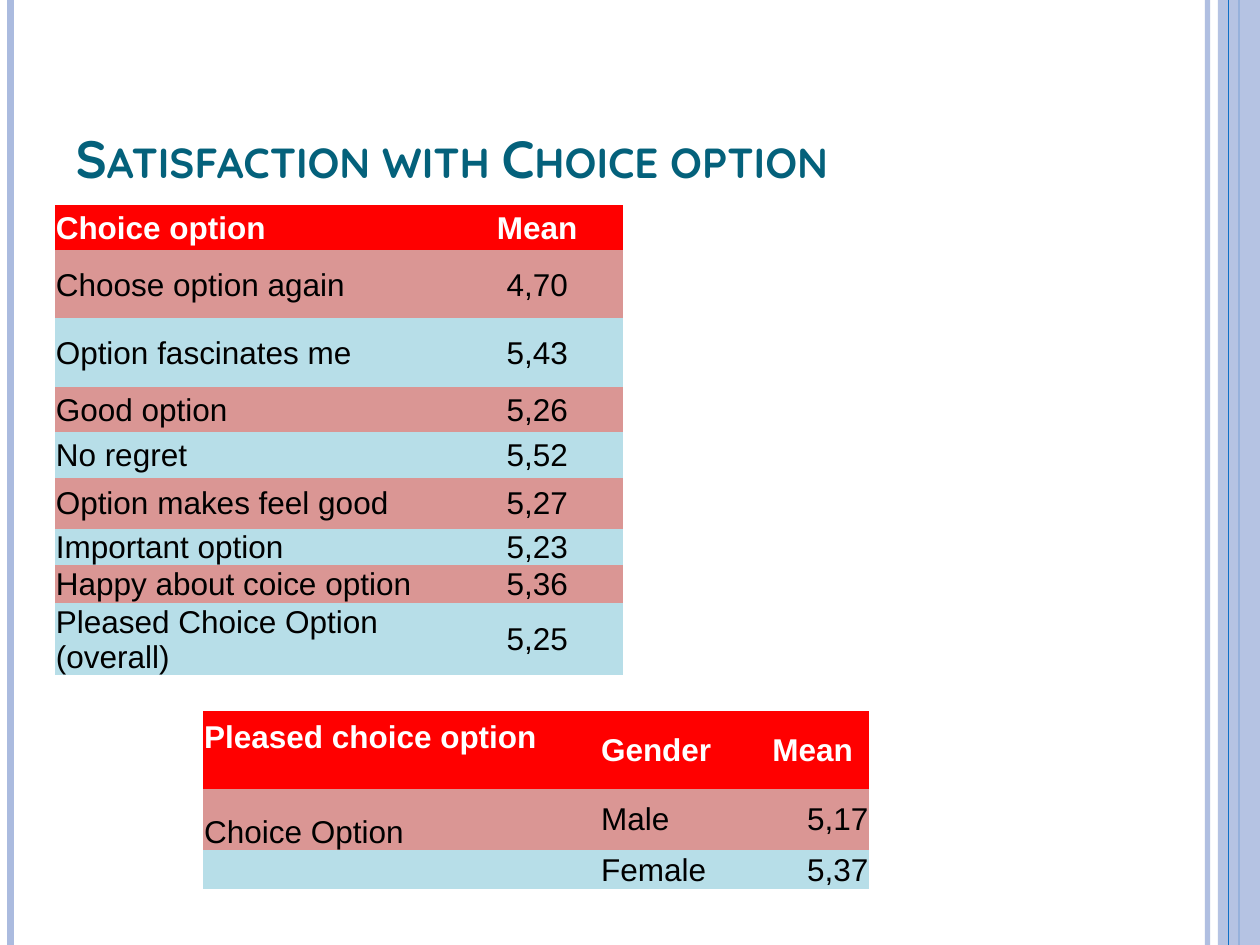
from dataclasses import dataclass

from lxml import etree
from pptx import Presentation
from pptx import util as u
from pptx.dml.color import RGBColor
from pptx.enum import shapes, text
from pptx.oxml import ns

Pt = u.Pt


@dataclass(frozen=True)
class Theme:
    title_font: str = "Quicksand"
    table_font: str = "Arial"
    title_size: float = 30
    table_size: float = 18
    title: str = "04617B"
    pale: str = "ABBBDF"
    blue: str = "0F6FC6"
    header: str = "FF0000"
    header_text: str = "FFFFFF"
    body_text: str = "000000"
    bands: tuple = ("DA9694", "B7DEE8")


THEME = Theme()
WIDTH, HEIGHT = 720, 540
NO_GRID = "{2D5ABB26-0587-4C30-8999-92F81FD0307C}"
LEFT, CENTER, RIGHT = (text.PP_ALIGN.LEFT, text.PP_ALIGN.CENTER,
                       text.PP_ALIGN.RIGHT)
MIDDLE, BOTTOM = text.MSO_ANCHOR.MIDDLE, text.MSO_ANCHOR.BOTTOM


def set_all(target, values):
    for name, value in values.items():
        setattr(target, name, value)


def set_font(font, color, **values):
    set_all(font, values)
    font.color.rgb = RGBColor.from_string(color)


def set_opacity(part, percent):
    color = next(part._element.spPr.iter(ns.qn("a:srgbClr")))
    etree.SubElement(color, ns.qn("a:alpha"), val=str(percent * 1000))


def add_rule(page, x, top, height, color, weight):
    rule = page.shapes.add_connector(
        shapes.MSO_CONNECTOR.STRAIGHT, Pt(x), Pt(top), Pt(x), Pt(top + height))
    rule.line.color.rgb = RGBColor.from_string(color)
    rule.line.width = Pt(weight)
    etree.SubElement(rule._element.spPr, ns.qn("a:effectLst"))
    return rule


def add_side_bands(page, box):
    """Vertical rules and the tinted band along the page edges."""
    left, top, width, height = box
    right = left + width
    set_opacity(add_rule(page, right - 30, top, height, THEME.pale, 3), 93)
    add_rule(page, left + 6, top, height, THEME.pale, 4.5)
    add_rule(page, right - 12, top, height, THEME.blue, 1.5)
    band = page.shapes.add_shape(shapes.MSO_SHAPE.RECTANGLE, Pt(right - 24),
                                 Pt(top), Pt(24), Pt(height))
    band.shadow.inherit = False
    band.fill.solid()
    band.fill.fore_color.rgb = RGBColor.from_string(THEME.pale)
    band.line.fill.background()
    set_opacity(band, 87)
    add_rule(page, right - 18, top, height, THEME.blue, 0.75)


def add_title(page, box, wording):
    title = page.shapes.title
    set_all(title, dict(zip(("left", "top", "width", "height"), map(Pt, box))))
    set_all(title.text_frame, {"auto_size": text.MSO_AUTO_SIZE.NONE,
                               "word_wrap": True, "vertical_anchor": BOTTOM})
    para = title.text_frame.paragraphs[0]
    para.alignment = LEFT
    span = para.add_run()
    span.text = wording
    set_font(span.font, THEME.title, name=THEME.title_font,
             size=Pt(THEME.title_size), bold=True)
    span.font._element.set("cap", "small")


def add_banded_table(page, box, columns, heights, rows, header_aligns, aligns):
    """Table with a header row and alternating row colours."""
    table = page.shapes.add_table(len(rows), len(columns), *map(Pt, box)).table
    table._tbl.tblPr.find(ns.qn("a:tableStyleId")).text = NO_GRID
    for column, width in zip(table.columns, columns):
        column.width = Pt(width)
    for index, (row, height, words) in enumerate(
            zip(table.rows, heights, rows)):
        row.height = Pt(height)
        is_header = index == 0
        fill = THEME.header if is_header else THEME.bands[(index - 1) % 2]
        color = THEME.header_text if is_header else THEME.body_text
        for cell, word, align in zip(row.cells, words,
                                     header_aligns if is_header else aligns):
            cell.fill.solid()
            cell.fill.fore_color.rgb = RGBColor.from_string(fill)
            set_all(cell, {"margin_left": Pt(0.7), "margin_right": Pt(0.7),
                           "margin_top": Pt(0.7), "margin_bottom": 0,
                           "vertical_anchor": MIDDLE})
            if word:
                para = cell.text_frame.paragraphs[0]
                para.alignment = align
                span = para.add_run()
                span.text = word
                set_font(span.font, color, name=THEME.table_font,
                         size=Pt(THEME.table_size), bold=is_header)
    return table


def add_option_table(page, box):
    rows = [("Choice option", "Mean"),
            ("Choose option again", "4,70"),
            ("Option fascinates me", "5,43"),
            ("Good option", "5,26"),
            ("No regret", "5,52"),
            ("Option makes feel good", "5,27"),
            ("Important option", "5,23"),
            ("Happy about coice option", "5,36"),
            ("Pleased Choice Option (overall)", "5,25")]
    heights = (26.2, 38.9, 38.9, 26.2, 26.2, 28.8, 20.6, 21.6, 41.4)
    aligns = (LEFT, CENTER)
    add_banded_table(page, box, (226.8, 97.9), heights, rows, aligns, aligns)


def add_gender_table(page, box):
    rows = [("Pleased choice option", "Gender", "Mean"),
            ("Choice Option", "Male", "5,17"),
            ("", "Female", "5,37")]
    table = add_banded_table(page, box, (226.8, 97.9, 56.2),
                             (44.6, 34.8, 18), rows, (LEFT,) * 3,
                             (LEFT, LEFT, RIGHT))
    # The first column sits low, its heading one line above the row's end
    for row in range(2):
        table.cell(row, 0).vertical_anchor = BOTTOM
    table.cell(0, 0).margin_bottom = Pt(19.5)


def main():
    deck = Presentation()
    set_all(deck, {"slide_width": Pt(WIDTH), "slide_height": Pt(HEIGHT)})
    page = deck.slides.add_slide(deck.slide_layouts[5])
    add_side_bands(page, (0, 0, WIDTH, HEIGHT))
    add_title(page, (36, 21.6, 588, 90), "Satisfaction with Choice option")
    add_option_table(page, (31.2, 116.9, 324.7, 268.8))
    add_gender_table(page, (116, 406.2, 380.9, 97.4))
    deck.save("out.pptx")


if __name__ == "__main__":
    main()
